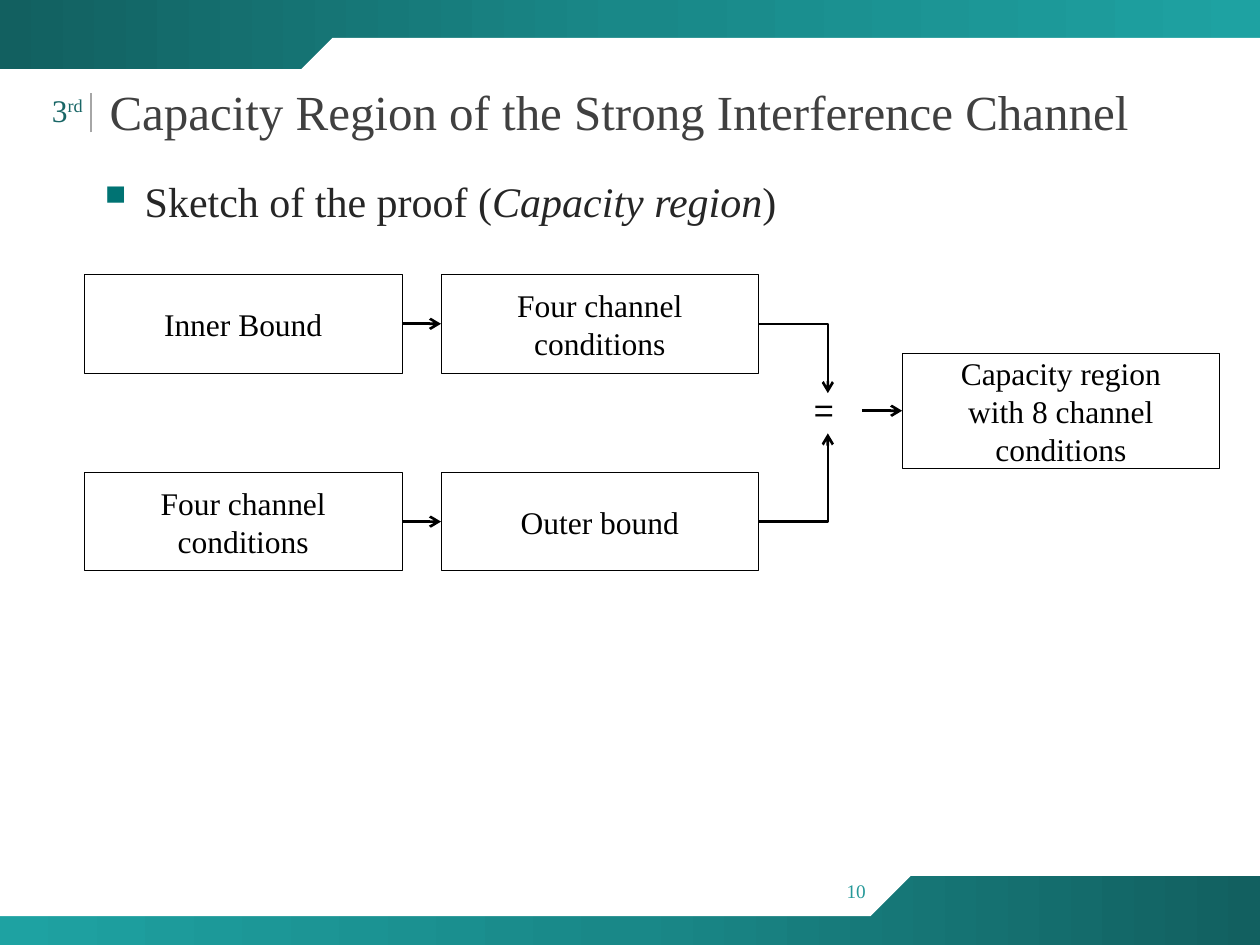
from lxml import etree
from pptx import Presentation
from pptx.dml.color import RGBColor
from pptx.enum.shapes import MSO_CONNECTOR, MSO_SHAPE
from pptx.enum.text import MSO_ANCHOR, PP_ALIGN
from pptx.oxml import parse_xml
from pptx.oxml.ns import nsdecls, qn
from pptx.util import Inches, Pt

FONT = "Times New Roman"
BLACK = RGBColor(0, 0, 0)
WHITE = RGBColor(0xFF, 0xFF, 0xFF)
GREY = RGBColor(0xA6, 0xA6, 0xA6)
TITLE = RGBColor(0x40, 0x40, 0x40)
BODY = RGBColor(0x26, 0x26, 0x26)
TEAL = RGBColor(0x19, 0x66, 0x66)
PAGE = RGBColor(0x26, 0x99, 0x99)
BULLET = RGBColor(0, 0x73, 0x73)
BAND = [(0, RGBColor(0x12, 0x60, 0x60)), (50, RGBColor(0x19, 0x88, 0x88)),
        (100, RGBColor(0x1E, 0xA2, 0xA2))]


def style(p, size, color, align=PP_ALIGN.LEFT, font=FONT):
    """Format every run of a paragraph."""
    p.alignment = align
    for r in p.runs:
        r.font.name, r.font.size, r.font.color.rgb = font, Pt(size), color


def add_text(s, box, text, size, color, align=PP_ALIGN.LEFT, font=FONT, wrap=True):
    """Add a one-paragraph text box and return its paragraph."""
    tf = s.shapes.add_textbox(*map(Inches, box)).text_frame
    tf.word_wrap = wrap
    p = tf.paragraphs[0]
    p.text = text
    style(p, size, color, align, font)
    return p


def add_band(s, box, cutout, angle):
    """Add a gradient band and the white snipped panel that shapes it."""
    sp = s.shapes.add_shape(MSO_SHAPE.RECTANGLE, *map(Inches, box))
    sp.shadow.inherit = False
    sp.line.fill.background()
    stops = "".join(f'<a:gs pos="{pos * 1000}"><a:srgbClr val="{color}"/></a:gs>'
                    for pos, color in BAND)
    sp._element.spPr.find(qn("a:prstGeom")).addnext(parse_xml(
        f'<a:gradFill {nsdecls("a")}><a:gsLst>{stops}</a:gsLst>'
        f'<a:lin ang="{angle * 60000}" scaled="0"/></a:gradFill>'))
    panel = s.shapes.add_shape(MSO_SHAPE.SNIP_1_RECTANGLE, *map(Inches, cutout))
    panel.adjustments[0] = 0.5
    panel.rotation = angle
    panel._element.spPr.find(qn("a:xfrm")).set("flipH", "1")
    panel.shadow.inherit = False
    panel.fill.solid()
    panel.fill.fore_color.rgb = WHITE
    panel.line.fill.background()


def add_line(s, start, end, color=BLACK, width=1.5, arrow=True, elbow=False):
    """Add a straight or one-bend connector between two points."""
    kind = MSO_CONNECTOR.ELBOW if elbow else MSO_CONNECTOR.STRAIGHT
    cxn = s.shapes.add_connector(kind, *map(Inches, (*start, *end)))
    cxn.line.color.rgb = color
    cxn.line.width = Pt(width)
    spPr = cxn._element.spPr
    if elbow:
        spPr.find(qn("a:prstGeom")).set("prst", "bentConnector2")
    if arrow:
        etree.SubElement(spPr.find(qn("a:ln")), qn("a:tailEnd"), type="arrow")
    etree.SubElement(spPr, qn("a:effectLst"))
    return cxn


def add_heading(s, x, y):
    """Place the ordinal, the divider and the slide title."""
    add_line(s, (x + 0.42, y + 0.45), (x + 0.42, y + 0.14), GREY, 1, arrow=False)
    p = add_text(s, (x, y + 0.07, 0.47, 0.4), "3", 18, TEAL, wrap=False)
    r = p.add_run()
    r.text = "rd"
    style(p, 18, TEAL, PP_ALIGN.CENTER)
    r.font._element.set("baseline", "30000")

    title = s.shapes.title
    s.shapes._spTree.append(title._element)
    title.left, title.top = Inches(x + 0.47), Inches(y)
    title.width, title.height = Inches(8.87), Inches(0.57)
    tf = title.text_frame
    tf.text = "Capacity Region of the Strong Interference Channel"
    tf.vertical_anchor = MSO_ANCHOR.TOP
    style(tf.paragraphs[0], 28, TITLE)


def add_body(s, box):
    """Place the bulleted line."""
    p = add_text(s, box, "Sketch of the proof (", 24, BODY)
    for text, italic in (("Capacity region", True), (")", False)):
        r = p.add_run()
        r.text, r.font.italic = text, italic
    style(p, 24, BODY)
    pPr = p._p.get_or_add_pPr()
    pPr.set("marL", str(Inches(0.38)))
    pPr.set("indent", str(-Inches(0.38)))
    color = etree.SubElement(pPr, qn("a:buClr"))
    etree.SubElement(color, qn("a:srgbClr"), val=str(BULLET))
    etree.SubElement(pPr, qn("a:buSzPct"), val="120000")
    etree.SubElement(pPr, qn("a:buChar"), char="▪")


def add_box(s, x, y, h, text):
    """Add an outlined box with centred text."""
    sp = s.shapes.add_shape(MSO_SHAPE.RECTANGLE, *map(Inches, (x, y, 2.52, h)))
    sp.shadow.inherit = False
    sp.fill.background()
    sp.line.color.rgb = BLACK
    sp.line.width = Pt(0.25)
    tf = sp.text_frame
    tf.text = text
    tf.word_wrap = True
    tf.vertical_anchor = MSO_ANCHOR.MIDDLE
    for p in tf.paragraphs:
        style(p, 18, BLACK, PP_ALIGN.CENTER)
    return sp


def add_flow(s, x, y):
    """Place the two proof branches, the equals sign and the result."""
    step, h, join = 2.83, 0.78, x + 5.9
    rows = ((y, "Inner Bound", "Four channel conditions", y + 0.94),
            (y + 1.57, "Four channel conditions", "Outer bound", y + 1.26))
    for top, first, second, tip in rows:
        left = add_box(s, x, top, h, first)
        right = add_box(s, x + step, top, h, second)
        mid = top + h / 2
        cxn = add_line(s, (x + 2.52, mid), (x + step, mid))
        cxn.begin_connect(left, 3)
        cxn.end_connect(right, 1)
        add_line(s, (x + step + 2.52, mid), (join, tip), elbow=True)
    add_text(s, (join - 0.2, y + 0.86, 0.47, 0.44), "=", 20, BLACK,
             font="Noto Sans CJK KR")
    result = add_box(s, x + 6.49, y + 0.62, 0.92,
                     "Capacity region\nwith 8 channel conditions")
    cxn = add_line(s, (x + 6.17, y + 1.08), (x + 6.49, y + 1.08))
    cxn.end_connect(result, 1)


def main():
    """Build and save the slide."""
    prs = Presentation()
    prs.slide_width, prs.slide_height = Inches(10), Inches(7.5)
    s = prs.slides.add_slide(prs.slide_layouts[5])
    add_band(s, (0, 0, 10, 0.55), (2.21, 0.3, 7.79, 0.86), 0)
    add_band(s, (0, 6.95, 10, 0.55), (0, 6.41, 7.34, 0.86), 180)
    add_text(s, (6.62, 6.93, 0.38, 0.29), "10", 11, PAGE, wrap=False)
    add_heading(s, 0.3, 0.6)
    add_body(s, (0.67, 1.34, 8.98, 0.5))
    add_flow(s, 0.67, 2.18)
    prs.save("out.pptx")


if __name__ == "__main__":
    main()
